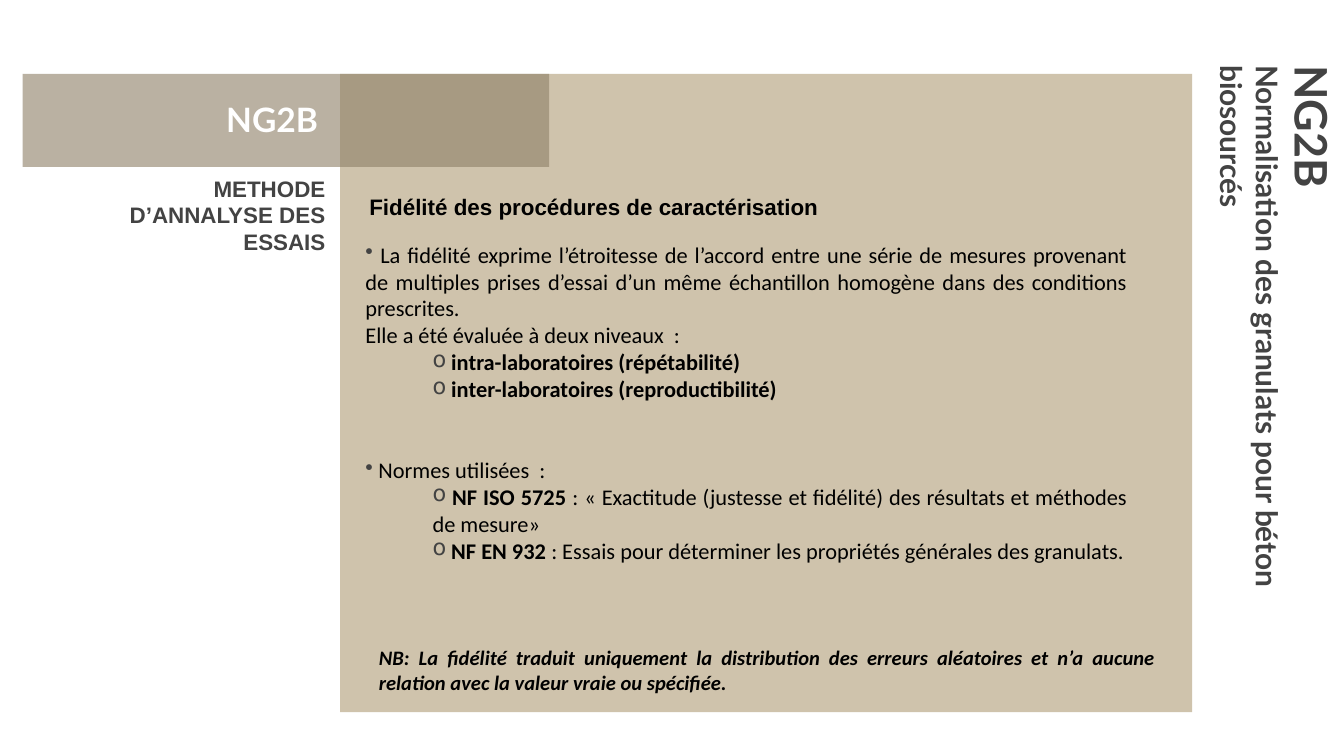
from lxml import etree
from pptx import Presentation
from pptx.dml.color import RGBColor
from pptx.enum import shapes, text
from pptx.oxml import ns
from pptx.util import Pt

GREY, BLACK, WHITE = "434343", "000000", "FFFFFF"
SAND, BROWN = "CFC3AC", "908269"
ALIGN = text.PP_ALIGN
ANCHOR = text.MSO_ANCHOR


def color(value):
    return RGBColor.from_string(value)


def sub(parent, tag, **attributes):
    return etree.SubElement(parent, ns.qn(tag), attributes)


class SlideBuilder:
    """Holds the text style and the slide being filled."""

    margin = 13.7  # left indent of the main text

    def __init__(self, slide):
        self.slide = slide

    def panel(self, x, y, w, h, fill, opacity=100):
        panel = self.slide.shapes.add_shape(
            shapes.MSO_SHAPE.RECTANGLE, Pt(x), Pt(y), Pt(w), Pt(h))
        panel.shadow.inherit = False
        panel.line.fill.background()
        panel.fill.solid()
        panel.fill.fore_color.rgb = color(fill)
        if opacity < 100:
            srgb = panel.fill._xPr.find(".//" + ns.qn("a:srgbClr"))
            sub(srgb, "a:alpha", val=str(opacity * 1000))

    def frame(self, holder, anchor, inset):
        frame = holder.text_frame
        frame.word_wrap = True
        frame.auto_size = text.MSO_AUTO_SIZE.NONE
        frame.vertical_anchor = anchor
        frame.margin_left = frame.margin_right = Pt(7.2)
        frame.margin_top = frame.margin_bottom = Pt(inset)
        return frame

    def title(self, x, y, w, h, lines, rotation):
        title = self.slide.shapes.title
        title.left, title.top, title.width, title.height = Pt(x), Pt(y), Pt(w), Pt(h)
        title.rotation = rotation
        frame = self.frame(title, ANCHOR.MIDDLE, 0)
        for index, (words, size) in enumerate(lines):
            line = frame.paragraphs[0] if index == 0 else frame.add_paragraph()
            self.paragraph(line, [(words, True)], GREY, size, "Lato", ALIGN.LEFT)

    def box(self, x, y, w, h, anchor=ANCHOR.TOP, inset=3.6):
        box = self.slide.shapes.add_textbox(Pt(x), Pt(y), Pt(w), Pt(h))
        return self.frame(box, anchor, inset)

    def paragraph(self, paragraph, parts, ink=BLACK, size=12, font="Calibri",
                  align=ALIGN.JUSTIFY, indent=0, bullet=None, before=0, italic=False):
        properties = paragraph._p.get_or_add_pPr()
        properties.set("marL", str(Pt(indent)))
        properties.set("indent", "0")
        paragraph.alignment = align
        paragraph.space_before = Pt(before)
        if bullet:
            sub(sub(properties, "a:buClr"), "a:srgbClr", val=GREY)
            sub(properties, "a:buChar", char=bullet)
        style = paragraph.font
        style.name, style.size, style.italic = font, Pt(size), italic
        style.color.rgb = color(ink)
        for words, bold in parts:
            run = paragraph.add_run()
            run.text = words
            run.font.bold = bold

    def label(self, place, words, anchor=ANCHOR.TOP, inset=3.6, **style):
        frame = self.box(*place, anchor=anchor, inset=inset)
        self.paragraph(frame.paragraphs[0], [(words, True)], **style)

    def body(self, place, items):
        frame = self.box(*place)
        for index, (bullet, indent, before, parts) in enumerate(items):
            item = frame.paragraphs[0] if index == 0 else frame.add_paragraph()
            self.paragraph(item, parts, indent=indent, bullet=bullet, before=before)


def main():
    deck = Presentation()
    deck.slide_width, deck.slide_height = Pt(720), Pt(405)
    page = SlideBuilder(deck.slides.add_slide(deck.slide_layouts[5]))
    margin, deep = page.margin, page.margin + 36

    # Main panel and vertical project title
    page.panel(182.2, 39.6, 456.5, 342, SAND)
    page.title(504, 171.7, 360, 72, [
        ("NG2B", 24),
        ("Normalisation des granulats pour béton biosourcés", 16),
    ], rotation=90)

    # Header band and section name
    page.panel(12.2, 39.6, 282, 49.9, BROWN, opacity=62)
    page.label((18.7, 46.1, 254.2, 35.3), "NG2B", anchor=ANCHOR.MIDDLE, inset=7.2,
               ink=WHITE, size=18, font="Lato", align=ALIGN.CENTER)
    page.label((13.7, 86.4, 167.8, 64.8), "METHODE D’ANNALYSE DES ESSAIS", inset=7.2,
               ink=GREY, font="Arial", align=ALIGN.RIGHT, indent=22)

    # Heading and explanation
    page.label((177.1, 100.1, 280, 21.6), "Fidélité des procédures de caractérisation",
               font="Arial", indent=margin)
    page.body((175, 125.5, 436.3, 190), [
        ("•", margin, 0, [(
            " La fidélité exprime l’étroitesse de l’accord entre une série de mesures "
            "provenant de multiples prises d’essai d’un même échantillon homogène dans "
            "des conditions prescrites.", False)]),
        (None, margin, 0, [("Elle a été évaluée à deux niveaux  :", False)]),
        ("o", deep, 0, [(" intra-laboratoires (répétabilité)", True)]),
        ("o", deep, 0, [(" inter-laboratoires (reproductibilité)", True)]),
        ("•", margin, 29, [(" Normes utilisées  :", False)]),
        ("o", deep, 0, [
            (" NF ISO 5725 ", True),
            (": «\u00a0Exactitude (justesse et fidélité) des résultats et méthodes "
             "de mesure»".replace("\u00a0", " "), False)]),
        ("o", deep, 0, [
            (" NF EN 932 ", True),
            (": Essais pour déterminer les propriétés générales des granulats.", False)]),
    ])

    # Closing remark
    page.label((182.2, 342, 444.2, 33.8),
               "NB: La fidélité traduit uniquement la distribution des erreurs aléatoires "
               "et n’a aucune relation avec la valeur vraie ou spécifiée.",
               size=11, indent=margin, italic=True)

    deck.save("out.pptx")


if __name__ == "__main__":
    main()
